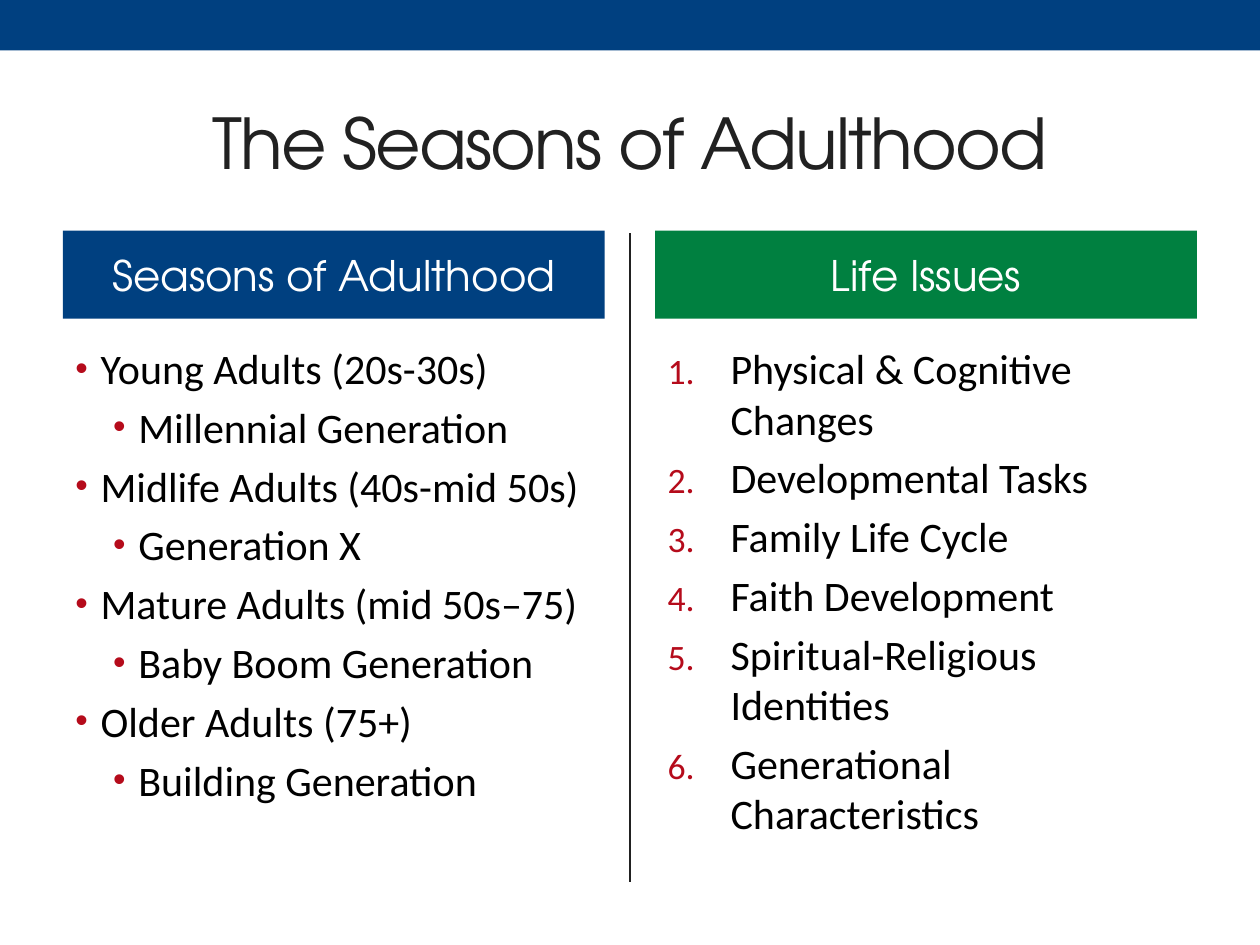
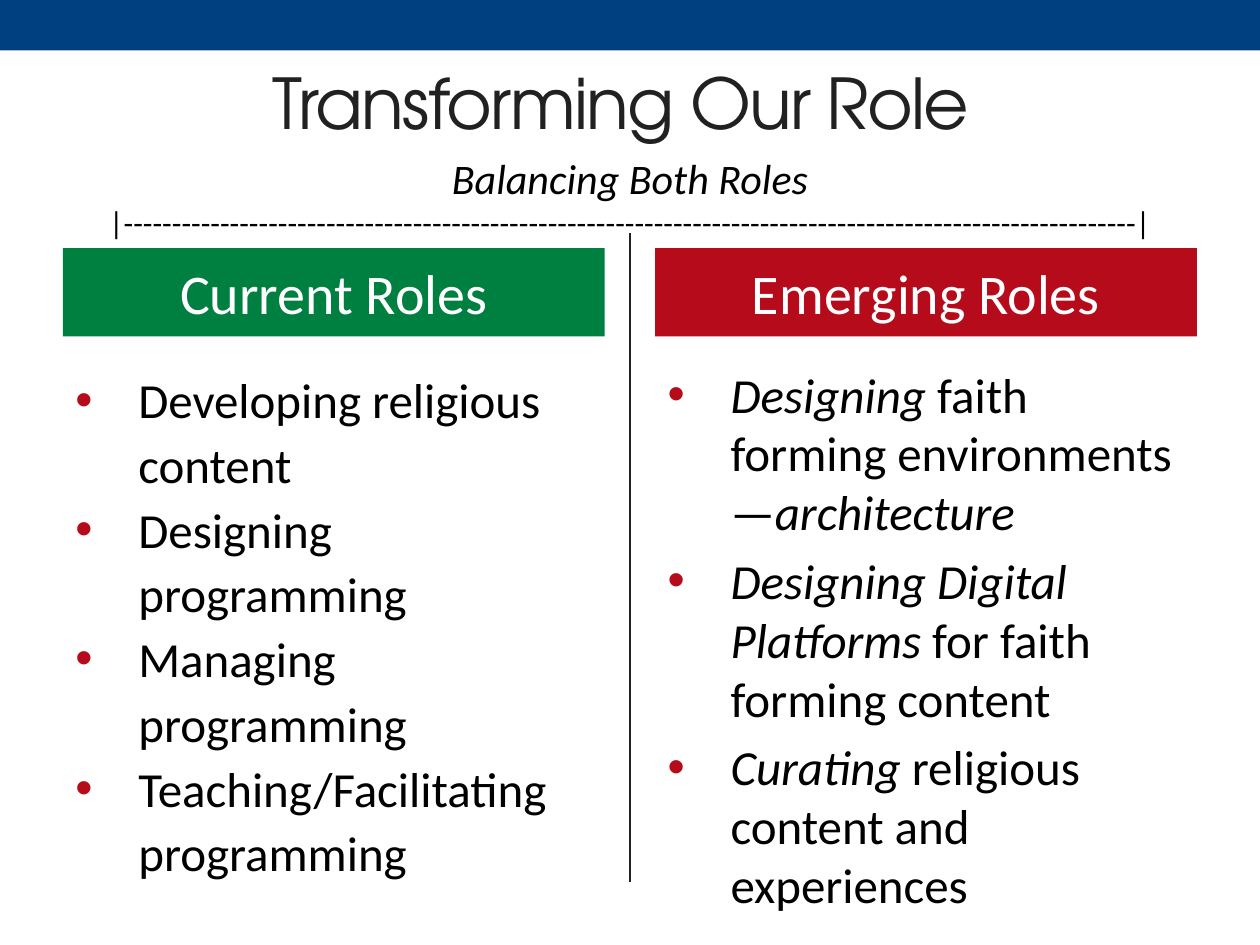
import dataclasses
import lxml.etree
import pptx
import pptx.dml.color
import pptx.enum.shapes
import pptx.enum.text
import pptx.oxml.ns
import pptx.util

Inches = pptx.util.Inches
Pt = pptx.util.Pt
Align = pptx.enum.text.PP_ALIGN
Anchor = pptx.enum.text.MSO_ANCHOR

BLUE, GREEN, RED = "004080", "008040", "B50B1B"
INK, BLACK, WHITE = "212121", "000000", "FFFFFF"
HEAD, BODY = "TeX Gyre Adventor", "Calibri"
LEFT, RIGHT, WIDE = 0.5, 5.2, 4.3


@dataclasses.dataclass
class Item:
    text: str
    level: int = 0


@dataclasses.dataclass
class Style:
    size: int
    hang: float
    indent: float = 0.5
    bullet: int = 100
    number: bool = False
    lead: float = 1.0
    gap: float = 0.2


@dataclasses.dataclass
class Column:
    left: float
    label: str
    fill: str
    items: list[Item]
    style: Style
    wide: float = WIDE


@dataclasses.dataclass
class Page:
    title: str
    box: tuple[float, float, float, float]
    top: float
    drop: float
    font: str
    size: int
    columns: list[Column]


def color(code: str):
    return pptx.dml.color.RGBColor.from_string(code)


def set_font(para, name: str, size: int, code: str) -> None:
    para.font.name = name
    para.font.size = Pt(size)
    para.font.color.rgb = color(code)


def add_block(slide, box, fill: str):
    block = slide.shapes.add_shape(
        pptx.enum.shapes.MSO_SHAPE.RECTANGLE, *map(Inches, box))
    block.shadow.inherit = False
    block.fill.solid()
    block.fill.fore_color.rgb = color(fill)
    block.line.fill.background()
    return block


def add_frame(slide, box):
    frame = slide.shapes.add_textbox(*map(Inches, box)).text_frame
    frame.word_wrap = True
    return frame


def add_base(slide) -> None:
    add_block(slide, (0, 0, 10, 0.4), BLUE)
    rule = slide.shapes.add_connector(
        pptx.enum.shapes.MSO_CONNECTOR.STRAIGHT,
        Inches(5), Inches(1.85), Inches(5), Inches(7))
    rule.line.color.rgb = color(INK)
    rule.line.width = Pt(1.5)
    lxml.etree.SubElement(
        rule._element.spPr, pptx.oxml.ns.qn("a:effectLst"))


def set_title(slide, page: Page) -> None:
    title = slide.shapes.title
    title.left, title.top, title.width, title.height = map(Inches, page.box)
    frame = title.text_frame
    frame.word_wrap = True
    frame.auto_size = pptx.enum.text.MSO_AUTO_SIZE.NONE
    frame.vertical_anchor = Anchor.MIDDLE
    para = frame.paragraphs[0]
    para.alignment = Align.CENTER
    run = para.add_run()
    run.text = page.title
    run._r.get_or_add_rPr().set("spc", "-100")
    set_font(para, HEAD, 40, INK)


def add_bullet(para, style: Style, level: int) -> None:
    props = para._p.get_or_add_pPr()
    props.set("marL", str(Inches(style.indent + 0.3 * level)))
    props.set("indent", str(-Inches(style.hang)))

    def add(parent, tag: str, **values: str):
        return lxml.etree.SubElement(
            parent, pptx.oxml.ns.qn(tag), values)

    add(add(props, "a:buClr"), "a:srgbClr", val=RED)
    add(props, "a:buSzPct", val=str(style.bullet * 1000))
    if style.number:
        add(props, "a:buFont", typeface=BODY)
        add(props, "a:buAutoNum", type="arabicPeriod")
    else:
        add(props, "a:buFont", typeface="Arial")
        add(props, "a:buChar", char="•")


def add_list(slide, box, items: list[Item], style: Style) -> None:
    frame = add_frame(slide, box)
    for index, item in enumerate(items):
        para = frame.add_paragraph() if index else frame.paragraphs[0]
        para.level = item.level
        add_bullet(para, style, item.level)
        para.line_spacing = style.lead
        para.space_before = Pt(style.gap * style.size if index else 0)
        for part, text in enumerate(item.text.split("*")):
            if text:
                run = para.add_run()
                run.text = text
                if part % 2:
                    run.font.italic = True
        set_font(para, BODY, style.size, BLACK)


def add_column(slide, page: Page, column: Column) -> None:
    block = add_block(slide, (column.left, page.top, WIDE, 0.7), column.fill)
    block.text_frame.vertical_anchor = Anchor.MIDDLE
    para = block.text_frame.paragraphs[0]
    para.text = column.label
    para.alignment = Align.CENTER
    set_font(para, page.font, page.size, WHITE)
    add_list(slide, (column.left, page.drop, column.wide, 4.32),
             column.items, column.style)


def add_page(deck, page: Page):
    slide = deck.slides.add_slide(deck.slide_layouts[5])
    add_base(slide)
    set_title(slide, page)
    for column in page.columns:
        add_column(slide, page, column)
    return slide


def add_scale(slide) -> None:
    frame = add_frame(slide, (0.5, 1.16, 9, 0.81))
    label, line = frame.paragraphs[0], frame.add_paragraph()
    label.text = "Balancing Both Roles"
    line.text = "|" + "-" * 105 + "|"
    for para, size in ((label, 24), (line, 18)):
        para.alignment = Align.CENTER
        set_font(para, BODY, size, BLACK)
    label.font.italic = True


SEASONS = Page(
    "The Seasons of Adulthood", (0.5, 0.58, 9, 1.08), 1.83, 2.67, HEAD, 24, [
        Column(LEFT, "Seasons of Adulthood", BLUE, [
            Item("Young Adults (20s-30s)"),
            Item("Millennial Generation", 1),
            Item("Midlife Adults (40s-mid 50s)"),
            Item("Generation X", 1),
            Item("Mature Adults (mid 50s–75)"),
            Item("Baby Boom Generation", 1),
            Item("Older Adults (75+)"),
            Item("Building Generation", 1),
        ], Style(24, 0.2, indent=0.2, bullet=85)),
        Column(RIGHT, "Life Issues", GREEN, [
            Item("Physical & Cognitive Changes"),
            Item("Developmental Tasks"),
            Item("Family Life Cycle"),
            Item("Faith Development"),
            Item("Spiritual-Religious Identities"),
            Item("Generational Characteristics"),
        ], Style(24, 0.5, bullet=85, number=True), wide=4.4),
    ])

ROLES = Page(
    "Transforming Our Role ", (0, 0.26, 10, 1.09), 1.97, 2.84, BODY, 32, [
        Column(LEFT, "Current Roles", GREEN, [
            Item("Developing religious content"),
            Item("Designing programming"),
            Item("Managing programming"),
            Item("Teaching/Facilitating programming"),
        ], Style(28, 0.5, lead=1.1, gap=0)),
        Column(RIGHT, "Emerging Roles", RED, [
            Item("*Designing* faith forming environments—*architecture*"),
            Item("*Designing Digital Platforms* for faith forming content"),
            Item("*Curating* religious content and experiences"),
        ], Style(28, 0.5)),
    ])


def main() -> None:
    deck = pptx.Presentation()
    deck.slide_width, deck.slide_height = Inches(10), Inches(7.5)
    add_page(deck, SEASONS)
    add_scale(add_page(deck, ROLES))
    deck.save("out.pptx")


if __name__ == "__main__":
    main()
